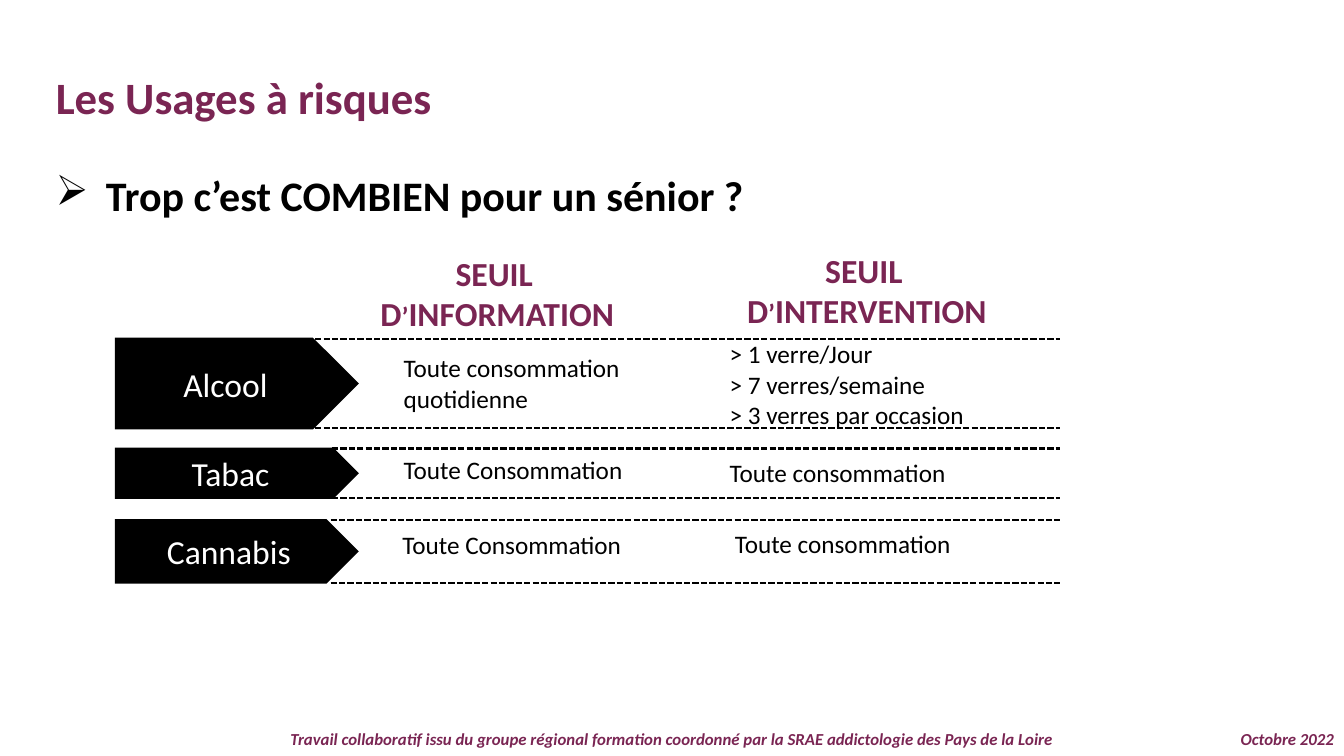
import pptx
import pptx.dml.color
import pptx.enum.dml
import pptx.enum.shapes
import pptx.enum.text
import pptx.oxml.ns
import pptx.util
from lxml import etree

COLORS = {"plum": "7A2553", "black": "000000", "white": "FFFFFF"}
FONT = "Calibri"
WIDTH, HEIGHT = pptx.util.Inches(13.33), pptx.util.Inches(7.5)
ALIGN = pptx.enum.text.PP_ALIGN
ANCHOR = pptx.enum.text.MSO_ANCHOR

BAR_LEFT, BAR_WIDTH = 8.55, 18.15
RULE_END = 78.85
RULE_INSET = 0.13

HEADINGS = [
    (23.5, 32.8, 27, ["SEUIL ", "D’INFORMATION"]),
    (51.45, 32.4, 26.1, ["SEUIL ", "D’INTERVENTION"]),
]
SUBSTANCES = [
    ("Alcool", 44.67, 12.13, 23.45, [
        (29.3, 46, 18.9, 1, ["Toute consommation quotidienne"]),
        (53.55, 44.13, 32.25, 1,
         ["> 1 verre/Jour", "> 7 verres/semaine", "> 3 verres par occasion"]),
    ]),
    ("Tabac", 59.2, 6.8, 24.7, [
        (29.3, 59.87, 20.85, 0.9, ["Toute Consommation"]),
        (53.55, 59.87, 20.85, 1, ["Toute consommation"]),
    ]),
    ("Cannabis", 68.67, 8.53, 24.6, [
        (29.2, 69.87, 20.85, 0.9, ["Toute Consommation"]),
        (53.93, 69.73, 20.85, 0.9, ["Toute consommation"]),
    ]),
]


def across(percent):
    return round(WIDTH * percent / 100)


def down(percent):
    return round(HEIGHT * percent / 100)


def area(left, top, width, height):
    return across(left), down(top), across(width), down(height)


def rgb(name):
    return pptx.dml.color.RGBColor.from_string(COLORS[name])


def write(frame, lines, size, color, align=ALIGN.LEFT, anchor=ANCHOR.TOP,
          spacing=1, bold=False, italic=False, small_caps=False):
    frame.word_wrap = True
    frame.vertical_anchor = anchor
    paragraph = frame.paragraphs[0]
    paragraph.alignment = align
    paragraph.line_spacing = spacing
    paragraph.space_before = pptx.util.Pt(0)
    for index, line in enumerate(lines):
        if index:
            paragraph.add_line_break()
        run = paragraph.add_run()
        run.text = line
        run.font.name = FONT
        run.font.size = pptx.util.Pt(size)
        run.font.bold = bold
        run.font.italic = italic
        run.font.color.rgb = rgb(color)
        if small_caps:
            run.font._element.set("cap", "small")
    return paragraph


def add_text(slide, box, lines, size, color, **style):
    frame = slide.shapes.add_textbox(*area(*box)).text_frame
    return write(frame, lines, size, color, **style)


def add_title(slide, text):
    title = slide.shapes.title
    title.left, title.top, title.width, title.height = area(3.4, 8.5, 95, 8.5)
    write(title.text_frame, [text], 32, "plum", bold=True)


def add_question(slide, text):
    question = add_text(slide, (3.4, 22.5, 87.5, 8.8), [text], 30, "black",
                        spacing=0.9, bold=True)
    properties = question._p.get_or_add_pPr()
    indent = pptx.util.Inches(0.5)
    properties.set("marL", str(indent))
    properties.set("indent", str(-indent))
    bullet = etree.SubElement(properties, pptx.oxml.ns.qn("a:buChar"))
    bullet.set("char", "➢")
    question.font.size = pptx.util.Pt(30)


def add_bar(slide, label, top, height):
    bar = slide.shapes.add_shape(pptx.enum.shapes.MSO_SHAPE.PENTAGON,
                                 *area(BAR_LEFT, top, BAR_WIDTH, height))
    bar.shadow.inherit = False
    bar.fill.solid()
    bar.fill.fore_color.rgb = rgb("black")
    bar.line.fill.background()
    write(bar.text_frame, [label], 24, "white", align=ALIGN.CENTER,
          anchor=ANCHOR.MIDDLE)


def add_rule(slide, start, level):
    rule = slide.shapes.add_connector(
        pptx.enum.shapes.MSO_CONNECTOR.STRAIGHT,
        across(start), down(level), across(RULE_END), down(level))
    rule.line.color.rgb = rgb("black")
    rule.line.width = pptx.util.Pt(1.5)
    rule.line.dash_style = pptx.enum.dml.MSO_LINE.SQUARE_DOT
    etree.SubElement(rule._element.spPr, pptx.oxml.ns.qn("a:effectLst"))


def add_substance(slide, label, top, height, rule_start, thresholds):
    add_bar(slide, label, top, height)
    for left, text_top, width, spacing, lines in thresholds:
        add_text(slide, (left, text_top, width, height), lines, 18, "black",
                 spacing=spacing)
    for level in (top + RULE_INSET, top + height - RULE_INSET):
        add_rule(slide, rule_start, level)


def add_footer(slide):
    style = dict(spacing=0.9, bold=True, italic=True)
    credit = ("Travail collaboratif issu du groupe régional formation "
              "coordonné par la SRAE addictologie des Pays de la Loire")
    add_text(slide, (0, 96, 100, 4), [credit], 12, "plum",
             align=ALIGN.CENTER, **style)
    add_text(slide, (89.2, 96, 10.8, 4), ["Octobre 2022"], 12, "plum",
             align=ALIGN.RIGHT, **style)


def main():
    deck = pptx.Presentation()
    deck.slide_width, deck.slide_height = WIDTH, HEIGHT
    slide = deck.slides.add_slide(deck.slide_layouts[5])
    add_footer(slide)
    add_title(slide, "Les Usages à risques")
    add_question(slide, "Trop c’est COMBIEN pour un sénior ?")
    for left, top, width, lines in HEADINGS:
        add_text(slide, (left, top, width, 12.1), lines, 24, "plum",
                 align=ALIGN.CENTER, bold=True, small_caps=True)
    for substance in SUBSTANCES:
        add_substance(slide, *substance)
    deck.save("out.pptx")


if __name__ == "__main__":
    main()
